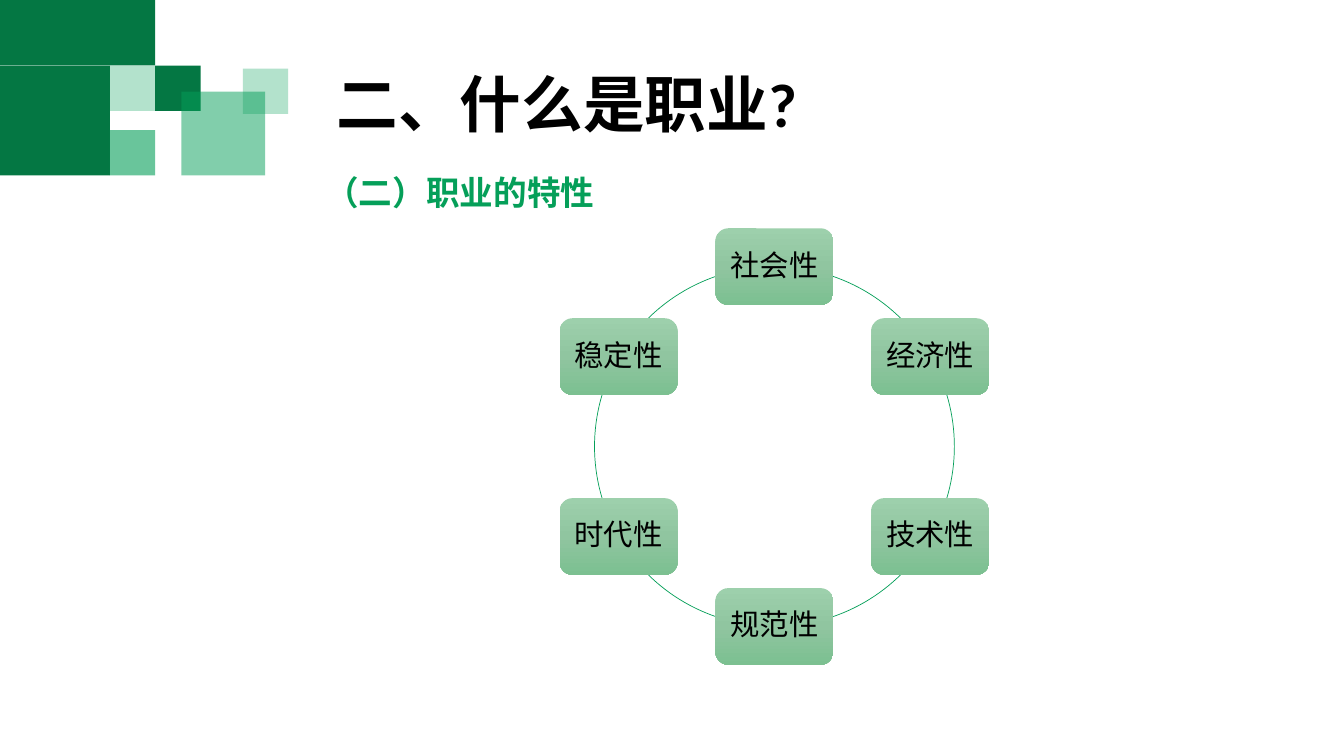
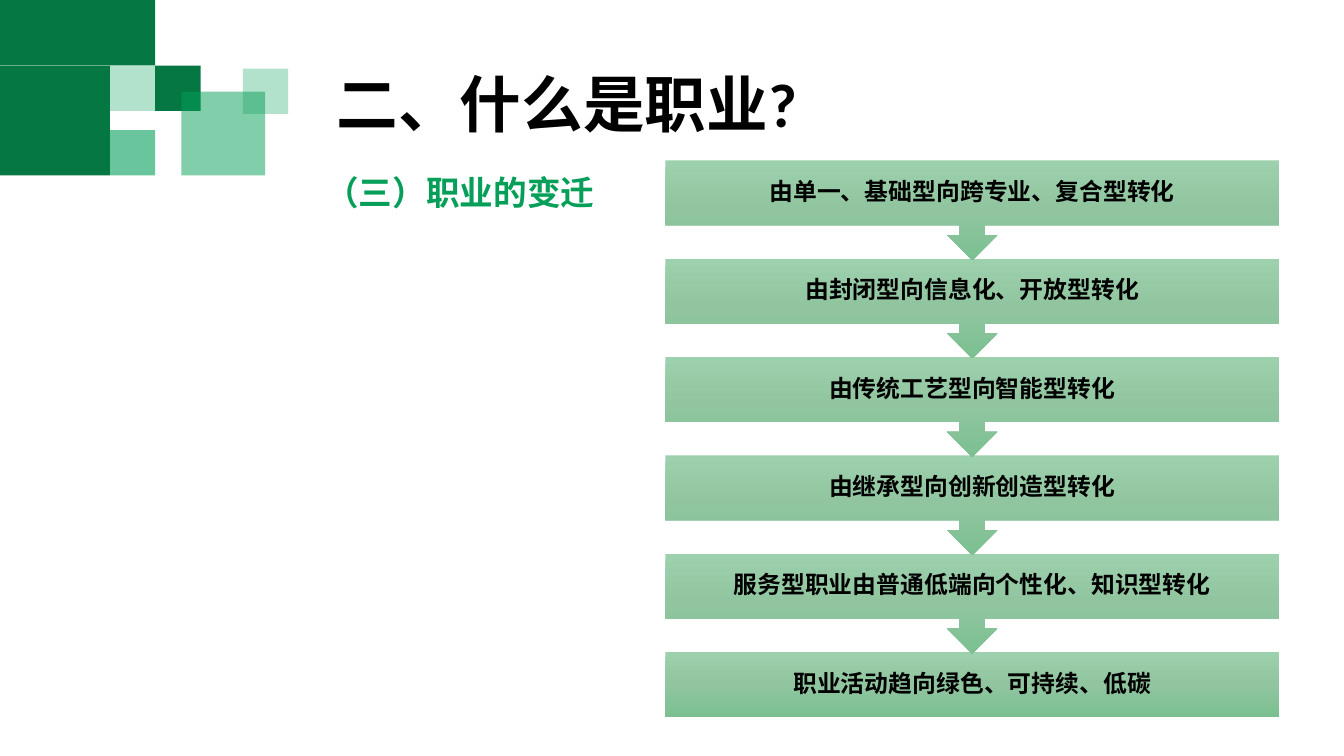
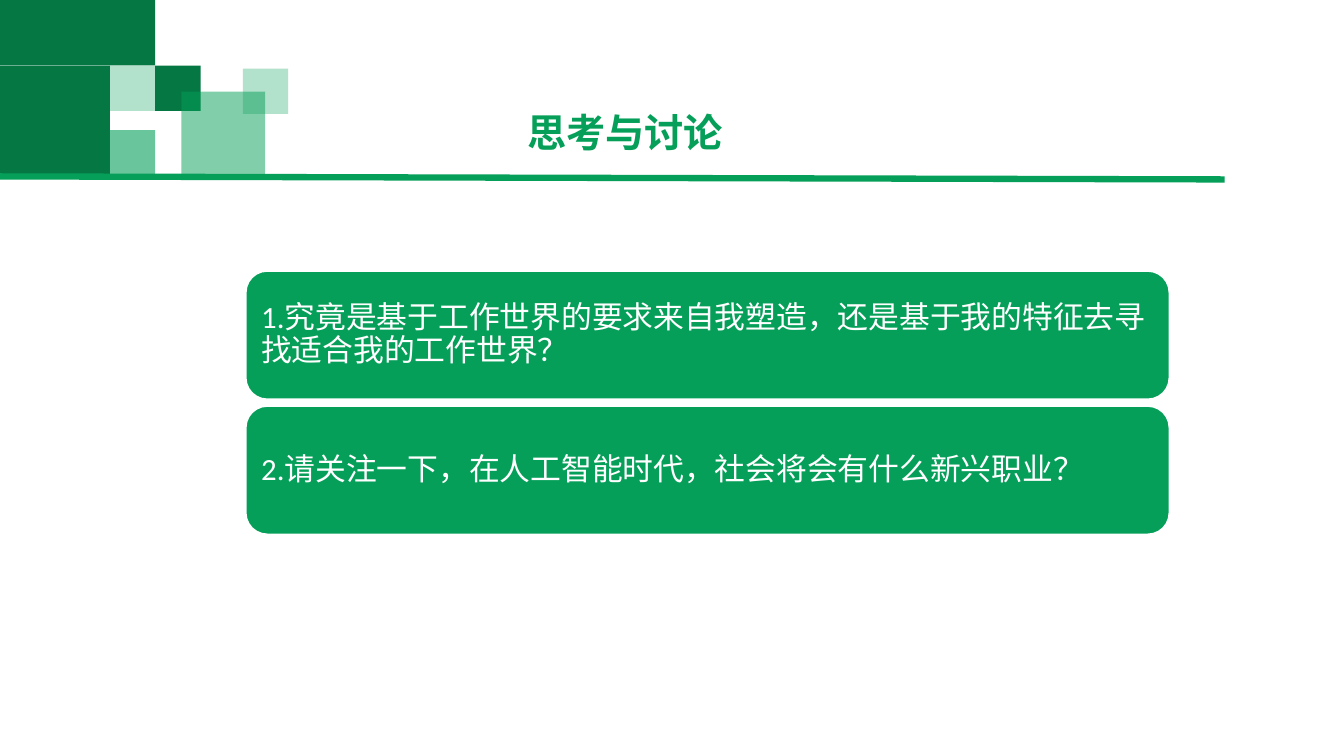
import copy
import dataclasses
import math
import typing

import lxml.etree
import pptx
import pptx.dml.color
import pptx.enum.dml
import pptx.enum.shapes
import pptx.enum.text
import pptx.oxml.ns
import pptx.util

COLUMNS, ROWS = 160, 90
CELL = pptx.util.Inches(7.5) / ROWS
DARK_GREEN, GREEN, BLACK, WHITE = "047743", "059F59", "000000", "FFFFFF"
GRADIENT = ("9DD0AC", "90C5A0", "7CC091")
LATIN_FONT, CHINESE_FONT = "Calibri", "Noto Sans CJK SC"
PRESET = pptx.enum.shapes.MSO_SHAPE
ALIGN = pptx.enum.text.PP_ALIGN
ANCHOR = pptx.enum.text.MSO_ANCHOR


@dataclasses.dataclass(frozen=True)
class Box:
    column: float
    row: float
    columns: float
    rows: float

    def lengths(self) -> tuple[int, int, int, int]:
        return grid(self.column), grid(self.row), grid(self.columns), grid(self.rows)


@dataclasses.dataclass(frozen=True)
class Tile:
    box: Box
    color: str
    opacity: int = 100


TILE_SIDE = 5.4
CORNER_TILES = (
    Tile(Box(0, 7.8, 13.08, 13.08), DARK_GREEN),
    Tile(Box(0, 0, 18.48, 7.8), DARK_GREEN),
    Tile(Box(13.08, 7.8, TILE_SIDE, TILE_SIDE), GREEN, 30),
    Tile(Box(18.48, 7.8, TILE_SIDE, TILE_SIDE), DARK_GREEN),
    Tile(Box(13.08, 15.48, TILE_SIDE, TILE_SIDE), GREEN, 60),
    Tile(Box(21.6, 10.92, 9.96, 9.96), GREEN, 50),
    Tile(Box(28.92, 8.16, TILE_SIDE, TILE_SIDE), GREEN, 30),
)
CHAPTER_TITLE = "二、什么是职业?"
CHAPTER_TITLE_BOX = Box(38.88, 8.28, 76.92, 18.84)
SUBTITLE_BOX = Box(37.56, 17.52, 34.68, 7.68)
TRAITS = ("社会性", "经济性", "技术性", "规范性", "时代性", "稳定性")
CHANGES = (
    "由单一、基础型向跨专业、复合型转化",
    "由封闭型向信息化、开放型转化",
    "由传统工艺型向智能型转化",
    "由继承型向创新创造型转化",
    "服务型职业由普通低端向个性化、知识型转化",
    "职业活动趋向绿色、可持续、低碳",
)
QUESTIONS = (
    "1.究竟是基于工作世界的要求来自我塑造，还是基于我的特征去寻找适合我的工作世界？",
    "2.请关注一下，在人工智能时代，社会将会有什么新兴职业？",
)


def grid(cells: float) -> int:
    return round(cells * CELL)


def rgb(color: str) -> pptx.dml.color.RGBColor:
    return pptx.dml.color.RGBColor.from_string(color)


def write_text(
    shape: typing.Any,
    text: str,
    *,
    size: float,
    color: str = BLACK,
    font: str = LATIN_FONT,
    bold: bool = False,
    align: ALIGN = ALIGN.LEFT,
    anchor: ANCHOR = ANCHOR.TOP,
    spacing: float = 0.9,
    inset: float | None = None,
    wrap: bool = True,
) -> None:
    frame = shape.text_frame
    frame.auto_size = pptx.enum.text.MSO_AUTO_SIZE.NONE
    frame.word_wrap = wrap
    frame.vertical_anchor = anchor
    if inset is not None:
        margin = pptx.util.Inches(inset)
        frame.margin_left = frame.margin_right = margin
        frame.margin_top = frame.margin_bottom = margin
    paragraph = frame.paragraphs[0]
    paragraph.alignment = align
    paragraph.line_spacing = spacing
    run = paragraph.add_run()
    run.text = text
    run.font.name = font
    run.font.size = pptx.util.Pt(size)
    run.font.bold = bold
    run.font.color.rgb = rgb(color)
    east_asian = lxml.etree.Element(pptx.oxml.ns.qn("a:ea"), typeface=font)
    run.font.color
    run_properties = run._r.get_or_add_rPr()
    run_properties.find(pptx.oxml.ns.qn("a:latin")).addnext(east_asian)


def add_panel(
    slide: typing.Any,
    preset: PRESET,
    box: Box,
    *,
    fill: str | tuple[str, ...] | None = None,
    opacity: int = 100,
    line: str | None = None,
    line_width: float = 1,
) -> typing.Any:
    shape = slide.shapes.add_shape(preset, *box.lengths())
    shape.shadow.inherit = False
    if fill is None:
        shape.fill.background()
    elif isinstance(fill, tuple):
        apply_gradient(shape, fill)
    else:
        shape.fill.solid()
        shape.fill.fore_color.rgb = rgb(fill)
    if opacity < 100:
        color_element = shape.element.spPr.find(".//" + pptx.oxml.ns.qn("a:srgbClr"))
        lxml.etree.SubElement(
            color_element, pptx.oxml.ns.qn("a:alpha"), val=str(opacity * 1000)
        )
    if line is None:
        shape.line.fill.background()
    else:
        shape.line.color.rgb = rgb(line)
        shape.line.width = pptx.util.Pt(line_width)
    return shape


def apply_gradient(shape: typing.Any, colors: tuple[str, ...]) -> None:
    shape.fill.gradient()
    shape.fill.gradient_angle = 270
    stop_list = shape.element.spPr.find(".//" + pptx.oxml.ns.qn("a:gsLst"))
    while len(stop_list) < len(colors):
        stop_list.append(copy.deepcopy(stop_list[0]))
    for index, stop in enumerate(shape.fill.gradient_stops):
        stop.position = index / (len(colors) - 1)
        stop.color.rgb = rgb(colors[index])


def decorate_layout(layout: typing.Any, slide: typing.Any) -> None:
    for index, tile in enumerate(CORNER_TILES):
        shape = add_panel(
            slide, PRESET.RECTANGLE, tile.box, fill=tile.color, opacity=tile.opacity
        )
        shape.element.nvSpPr.cNvPr.set("id", str(100 + index))
        layout.shapes.element.append(shape.element)


def add_title(
    slide: typing.Any, text: str, box: Box, *, size: float, color: str = BLACK
) -> None:
    title = slide.shapes.title
    title.left, title.top, title.width, title.height = box.lengths()
    write_text(title, text, size=size, color=color, bold=True)


def add_chapter_heading(slide: typing.Any, subtitle: str) -> None:
    add_title(slide, CHAPTER_TITLE, CHAPTER_TITLE_BOX, size=44)
    text_box = slide.shapes.add_textbox(*SUBTITLE_BOX.lengths())
    write_text(
        text_box, subtitle, size=24, color=GREEN, font=CHINESE_FONT,
        bold=True, spacing=1.5, wrap=False,
    )


def build_traits(slide: typing.Any) -> None:
    add_chapter_heading(slide, "（二）职业的特性")
    center_column, center_row, radius = 92.2, 53.16, 21.42
    card_columns, card_rows = 14.04, 9.12
    ring = Box(center_column - radius, center_row - radius, 2 * radius, 2 * radius)
    add_panel(slide, PRESET.OVAL, ring, line=GREEN, line_width=0.5)
    for index, trait in enumerate(TRAITS):
        angle = math.tau * index / len(TRAITS)
        box = Box(
            center_column + radius * math.sin(angle) - card_columns / 2,
            center_row - radius * math.cos(angle) - card_rows / 2,
            card_columns,
            card_rows,
        )
        card = add_panel(slide, PRESET.ROUNDED_RECTANGLE, box, fill=GRADIENT)
        write_text(
            card, trait, size=21, align=ALIGN.CENTER, anchor=ANCHOR.MIDDLE, inset=0.09
        )


def build_changes(slide: typing.Any) -> None:
    add_chapter_heading(slide, "（三）职业的变迁")
    pitch, last = 11.71, len(CHANGES) - 1
    for index in reversed(range(len(CHANGES))):
        preset = PRESET.RECTANGLE if index == last else PRESET.DOWN_ARROW_CALLOUT
        rows = 7.68 if index == last else 11.88
        box = Box(79.2, 19.08 + index * pitch, 73.08, rows)
        step = add_panel(slide, preset, box, fill=GRADIENT)
        write_text(
            step, CHANGES[index], size=17, bold=True,
            align=ALIGN.CENTER, anchor=ANCHOR.MIDDLE, inset=0.13,
        )


def build_discussion(slide: typing.Any) -> None:
    add_title(slide, "思考与讨论", Box(61.56, 12.96, 51.96, 6.24), size=28, color=GREEN)
    rule = slide.shapes.add_connector(
        pptx.enum.shapes.MSO_CONNECTOR.STRAIGHT,
        grid(0), grid(21), grid(145.8), grid(21.36),
    )
    rule.line.color.rgb = rgb(GREEN)
    rule.line.width = pptx.util.Pt(4.5)
    lxml.etree.SubElement(rule.element.spPr, pptx.oxml.ns.qn("a:effectLst"))
    for index, question in enumerate(QUESTIONS):
        box = Box(29.28, 32.28 + index * 16.08, 109.92, 15.24)
        card = add_panel(slide, PRESET.ROUNDED_RECTANGLE, box, fill=GREEN, line=WHITE)
        write_text(
            card, question, size=22, color=WHITE, anchor=ANCHOR.MIDDLE, inset=0.09
        )


def main() -> None:
    presentation = pptx.Presentation()
    presentation.slide_width = grid(COLUMNS)
    presentation.slide_height = grid(ROWS)
    layout = presentation.slide_layouts.get_by_name("Title Only")
    builders = (build_traits, build_changes, build_discussion)
    slides = [presentation.slides.add_slide(layout) for _ in builders]
    decorate_layout(layout, slides[0])
    for builder, slide in zip(builders, slides):
        builder(slide)
    presentation.save("out.pptx")


if __name__ == "__main__":
    main()
